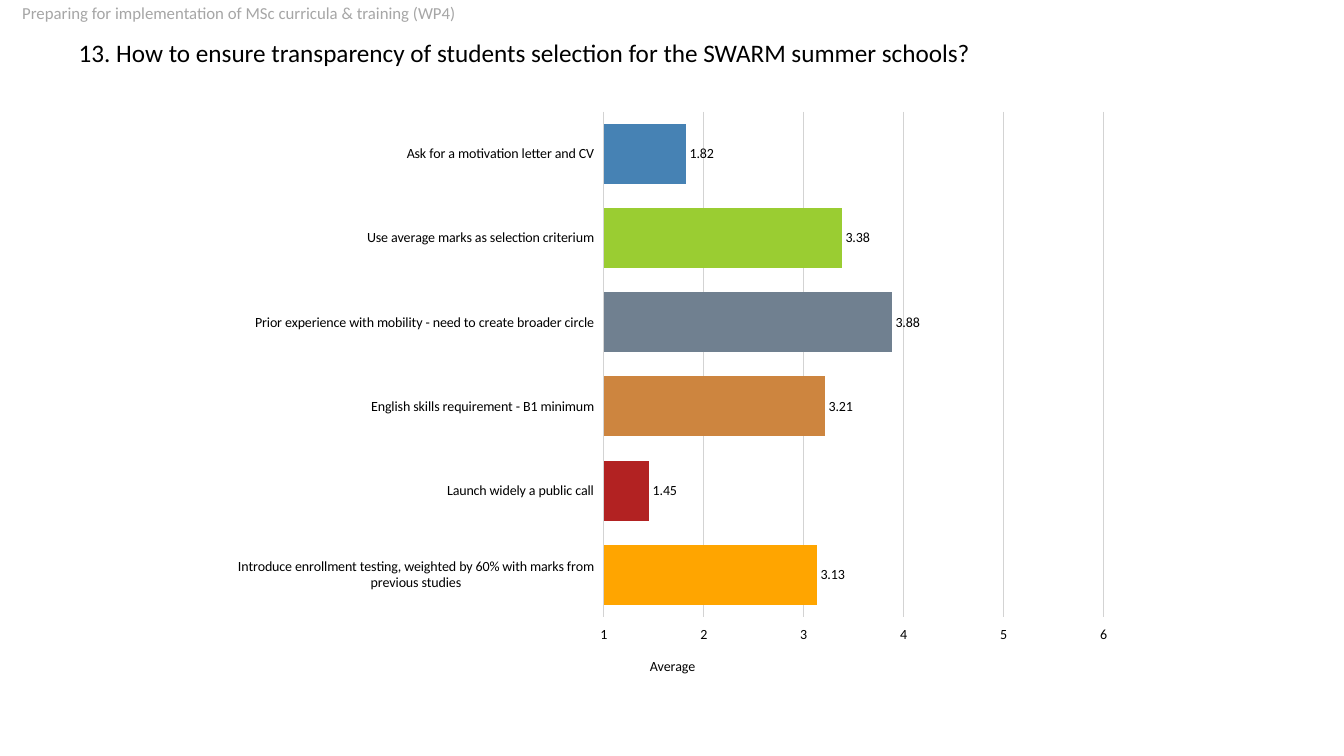
"""Build the survey slide on transparency of students selection."""
from lxml import etree
from pptx import Presentation
from pptx.chart.data import CategoryChartData
from pptx.dml.color import RGBColor
from pptx.enum.chart import XL_CHART_TYPE, XL_LABEL_POSITION, XL_TICK_LABEL_POSITION, XL_TICK_MARK
from pptx.enum.text import MSO_ANCHOR, MSO_AUTO_SIZE, PP_ALIGN
from pptx.oxml.ns import qn
from pptx.util import Inches, Pt

BAR_CLUSTERED = XL_CHART_TYPE.BAR_CLUSTERED
LABELS_HIGH = XL_TICK_LABEL_POSITION.HIGH
OUTSIDE_END = XL_LABEL_POSITION.OUTSIDE_END
TICK_CROSS = XL_TICK_MARK.CROSS
LEFT = PP_ALIGN.LEFT
MIDDLE, TOP = MSO_ANCHOR.MIDDLE, MSO_ANCHOR.TOP
NO_AUTOFIT = MSO_AUTO_SIZE.NONE

FONT = "Calibri"
COLORS = {
    "text": "000000",
    "header": "A6A6A6",
    "grid": "D3D3D3",
    "blue": "4682B4",
    "green": "9ACD32",
    "slate": "708090",
    "copper": "CD853F",
    "red": "B22222",
    "orange": "FFA500",
}
ANSWERS = [
    ("Ask for a motivation letter and CV", 1.82, "blue"),
    ("Use average marks as selection criterium", 3.38, "green"),
    ("Prior experience with mobility - need to create broader circle", 3.88, "slate"),
    ("English skills requirement - B1 minimum", 3.21, "copper"),
    ("Launch widely a public call", 1.45, "red"),
    ("Introduce enrollment testing, weighted by 60% with marks from previous studies",
     3.13, "orange"),
]


def style_font(font, size, color="text"):
    font.name = FONT
    font.size = Pt(size)
    font.bold = False
    font.color.rgb = RGBColor.from_string(COLORS[color])


def fill_placeholder(shape, box, text, size, color, anchor):
    shape.left, shape.top, shape.width, shape.height = [Inches(value) for value in box]
    frame = shape.text_frame
    frame.text = text
    frame.word_wrap = True
    frame.auto_size = NO_AUTOFIT
    frame.vertical_anchor = anchor
    paragraph = frame.paragraphs[0]
    paragraph.alignment = LEFT
    paragraph.line_spacing = 0.9
    style_font(paragraph.font, size, color)
    return paragraph


presentation = Presentation()
presentation.slide_width = Inches(13.33)
presentation.slide_height = Inches(7.5)
slide = presentation.slides.add_slide(presentation.slide_layouts[1])

fill_placeholder(
    slide.shapes.title, (0.68, 0.24, 12, 0.6),
    "13. How to ensure transparency of students selection for the SWARM summer schools?",
    18, "text", MIDDLE)
header = fill_placeholder(
    slide.placeholders[1], (0, 0, 13.33, 0.25),
    "Preparing for implementation of MSc curricula & training (WP4)",
    12, "header", TOP)
header.space_before = Pt(10)
properties = header._p.get_or_add_pPr()
properties.set("marL", str(Inches(0.12)))
properties.set("indent", "0")
properties.insert_element_before(
    etree.Element(qn("a:buNone")), "a:tabLst", "a:defRPr", "a:extLst")

chart_data = CategoryChartData()
chart_data.categories = [answer for answer, average, color in ANSWERS]
chart_data.add_series("Series 1", [average for answer, average, color in ANSWERS])
chart = slide.shapes.add_chart(
    BAR_CLUSTERED, Inches(2.18), Inches(0.99), Inches(8.98), Inches(5.91), chart_data).chart
chart.has_title = False
chart.has_legend = False
style_font(chart.font, 18)

category_axis, value_axis = chart.category_axis, chart.value_axis
for axis in (category_axis, value_axis):
    axis.major_tick_mark = TICK_CROSS
    axis.format.line.fill.background()
    style_font(axis.tick_labels.font, 10)
category_axis.reverse_order = True

value_axis.tick_label_position = LABELS_HIGH
value_axis.minimum_scale = 1
value_axis.maximum_scale = 6
value_axis.major_unit = 1
value_axis.tick_labels.number_format = "General"
value_axis.tick_labels.number_format_is_linked = False
value_axis.has_major_gridlines = True
grid_line = value_axis.major_gridlines.format.line
grid_line.color.rgb = RGBColor.from_string(COLORS["grid"])
grid_line.width = Pt(1)
axis_title = value_axis.axis_title.text_frame
axis_title.text = "Average"
style_font(axis_title.paragraphs[0].font, 10)

plot = chart.plots[0]
plot.gap_width = 40
plot.vary_by_categories = False
series = plot.series[0]
for index, (answer, average, color) in enumerate(ANSWERS):
    fill = series.points[index].format.fill
    fill.solid()
    fill.fore_color.rgb = RGBColor.from_string(COLORS[color])
labels = series.data_labels
labels.show_value = True
labels.number_format = "0.00"
labels.number_format_is_linked = False
labels.position = OUTSIDE_END
style_font(labels.font, 10)

presentation.save("out.pptx")
